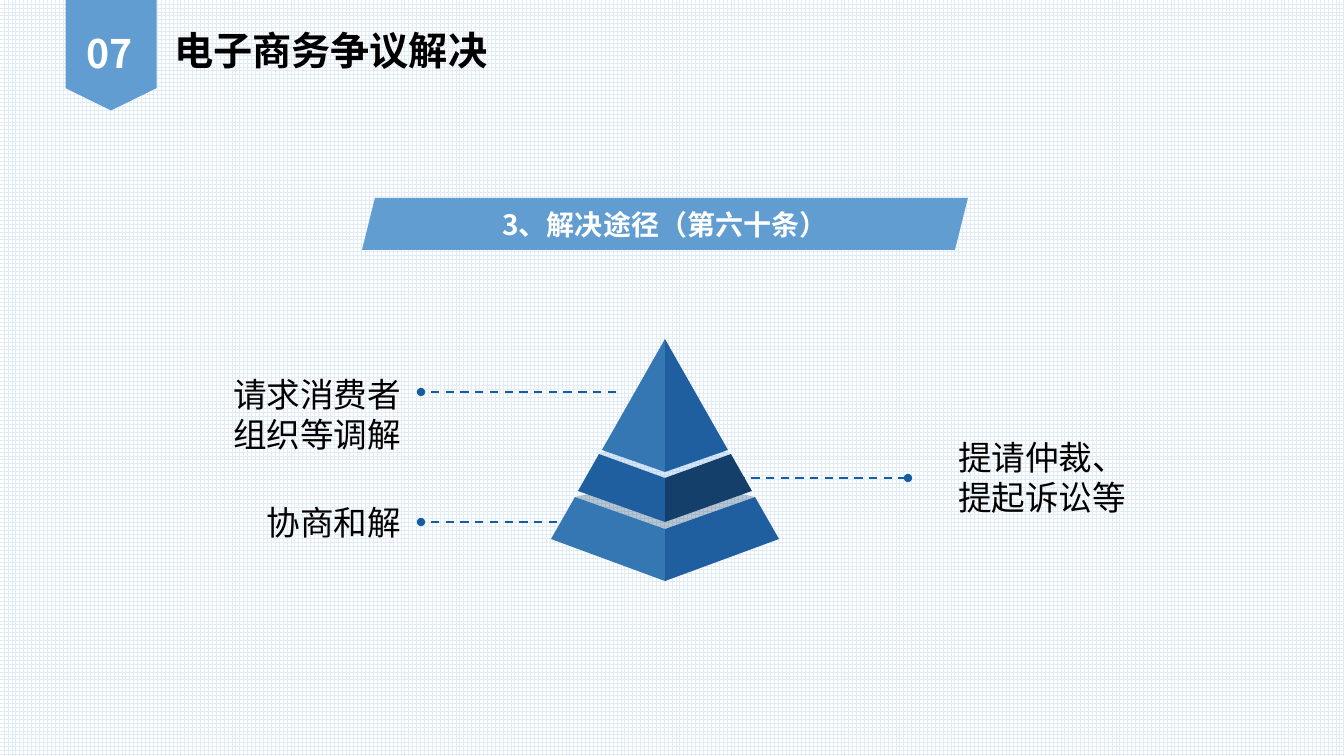
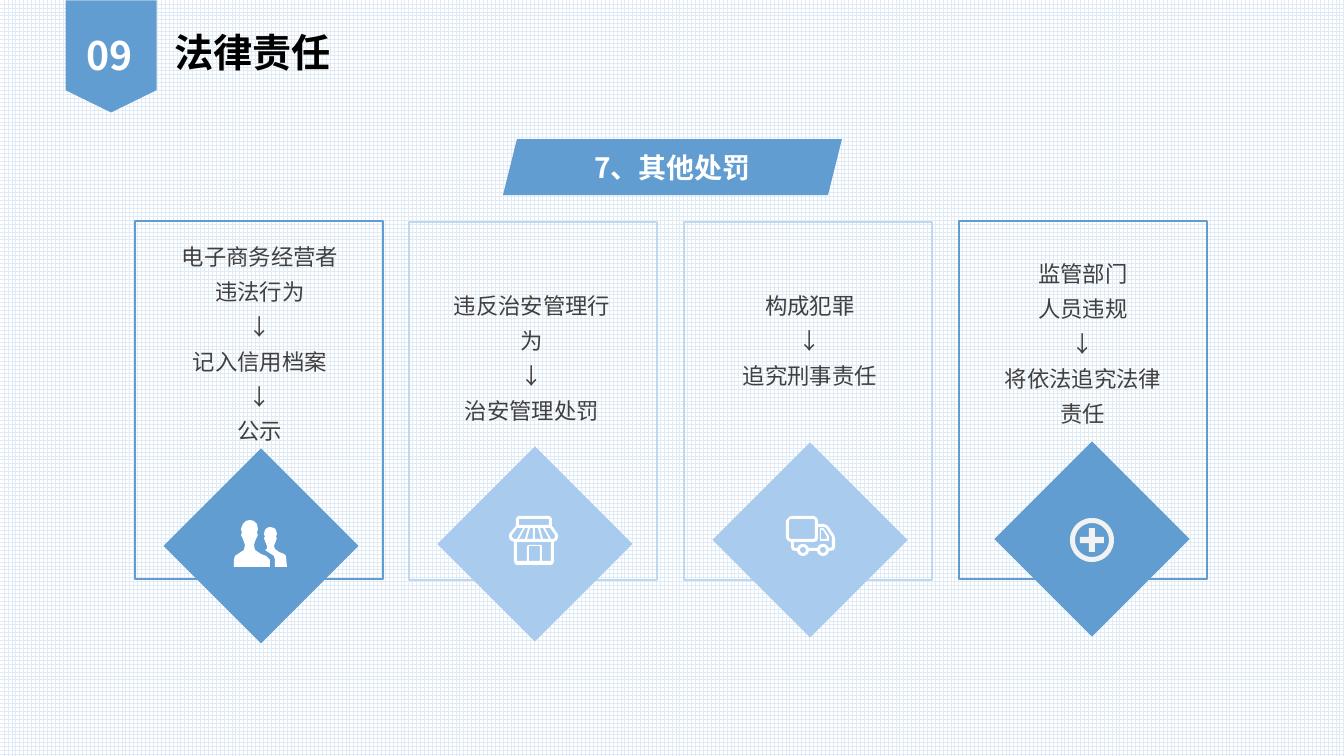
from math import cos, radians, sin
from typing import NamedTuple

from lxml.etree import SubElement
from pptx import Presentation
from pptx.dml.color import RGBColor
from pptx.enum.dml import MSO_LINE_DASH_STYLE as Dash, MSO_PATTERN_TYPE as Pattern
from pptx.enum.shapes import MSO_CONNECTOR_TYPE as Connector, MSO_SHAPE as Preset
from pptx.enum.text import MSO_ANCHOR as Anchor, MSO_AUTO_SIZE as AutoSize, PP_ALIGN as Align
from pptx.oxml.ns import qn
from pptx.util import Emu, Pt

EMU_PER_PX = 12192000 / 1344
FONT = "Noto Sans CJK SC"
BLUE, PALE_BLUE, PALE_LINE = "629DD1", "A9CCEE", "C0D8ED"
LIGHT_FACE, MID_FACE, DARK_FACE, LID = "3477B2", "1F5FA0", "143F6A", "7EB2E6"
LINK, WHITE, BLACK, GREY = "135DA0", "FFFFFF", "000000", "404040"
HEADING = {"size": Pt(28), "bold": True}
BANNER = {"size": Pt(20), "bold": True}
CALLOUT = {"size": Pt(24), "bold": False}
CARD_TEXT = {"size": Pt(16), "bold": False}


class Tier(NamedTuple):
    half_top: int
    shoulder: int
    ridge: int
    half_bottom: int
    corner: int
    front: int
    left_face: str
    right_face: str
    back: int = 0
    lid: str = ""


class Card(NamedTuple):
    top: int
    border: str
    fill: str
    diamond: tuple
    text_box: tuple
    lines: list
    icon: list
    icon_at: tuple
    icon_colour: str = WHITE


def px(length):
    return Emu(round(length * EMU_PER_PX))


def colour(value):
    return RGBColor.from_string(value)


def assign(target, values):
    for name, value in values.items():
        setattr(target, name, value)


def write(frame, lines, font, ink, align=Align.LEFT, spacing=1.0, anchor=Anchor.TOP):
    assign(frame, {"word_wrap": True, "auto_size": AutoSize.NONE, "vertical_anchor": anchor})
    for number, line in enumerate(lines):
        para = frame.add_paragraph() if number else frame.paragraphs[0]
        assign(para, {"alignment": align, "line_spacing": spacing})
        span = para.add_run()
        span.text = line
        assign(span.font, {"name": FONT, **font})
        span.font.color.rgb = colour(ink)
        SubElement(span.font._element, qn("a:ea"), typeface=FONT)


def add_text(page, box, lines, font, ink, **layout):
    label = page.shapes.add_textbox(*map(px, box))
    write(label.text_frame, lines, font, ink, **layout)


def paint(shape, fill=None, border=None, opacity=100):
    shape.shadow.inherit = False
    if fill:
        shape.fill.solid()
        shape.fill.fore_color.rgb = colour(fill)
    else:
        shape.fill.background()
    if border:
        shape.line.color.rgb = colour(border)
        shape.line.width = Pt(2)
    else:
        shape.line.fill.background()
    if opacity < 100:
        tint = shape.element.spPr.find(f"{qn('a:solidFill')}/{qn('a:srgbClr')}")
        SubElement(tint, qn("a:alpha"), val=str(opacity * 1000))


def add_preset(page, preset, box, rotation=0, **look):
    shape = page.shapes.add_shape(preset, *map(px, box))
    shape.rotation = rotation
    paint(shape, **look)
    return shape


def add_outline(page, contours, at=(0, 0), **look):
    builder = None
    for contour in contours:
        points = [(px(at[0] + x), px(at[1] + y)) for x, y in contour]
        if builder is None:
            builder = page.shapes.build_freeform(*points[0], scale=1.0)
        else:
            builder.move_to(*points[0])
        builder.add_line_segments(points[1:], close=True)
    paint(builder.convert_to_shape(), **look)


def add_link(page, begin_x, end_x, y):
    link = page.shapes.add_connector(Connector.STRAIGHT, px(begin_x), px(y), px(end_x), px(y))
    link.line.color.rgb = colour(LINK)
    assign(link.line, {"width": Pt(1.5), "dash_style": Dash.DASH})
    properties = link.element.spPr
    SubElement(properties.find(qn("a:ln")), qn("a:tailEnd"), type="oval")
    SubElement(properties, qn("a:effectLst"))


def arc(x, y, radius, start, end, steps=12):
    angles = [radians(start + (end - start) * step / steps) for step in range(steps + 1)]
    return [(x + radius * cos(angle), y + radius * sin(angle)) for angle in angles]


def ring(x, y, radius):
    return arc(x, y, radius, 0, 360, 48)


def round_box(left, top, right, bottom, radius):
    return (
        arc(left + radius, top + radius, radius, 180, 270)
        + arc(right - radius, top + radius, radius, 270, 360)
        + arc(right - radius, bottom - radius, radius, 0, 90)
        + arc(left + radius, bottom - radius, radius, 90, 180)
    )


PEOPLE = [
    [(27, 34), (21, 30), (20, 25), (22, 19), (24, 15), (23, 13), (24, 9), (23, 4), (20, 1),
     (16, 0), (12, 1), (9, 4), (7, 9), (8, 13), (7, 15), (9, 19), (11, 25), (10, 30), (4, 34),
     (1, 36), (0, 40), (0, 47), (36, 47), (36, 40), (32, 36)],
    [(53, 47), (52, 36), (50, 34), (45, 32), (41, 29), (40, 26), (42, 21), (43, 18), (42, 17),
     (43, 14), (42, 10), (40, 8), (36, 7), (33, 8), (31, 10), (30, 14), (31, 17), (30, 18),
     (31, 21), (33, 26), (33, 29), (31, 30), (40, 36), (41, 40), (41, 47)],
]
SHOP = [
    [(48, 17), (44, 11), (43, 10), (43, 3), (42, 1), (40, 0), (10, 0), (8, 1), (7, 3), (7, 10),
     (6, 11), (1, 17), (0, 19), (0, 21), (1, 24), (5, 26), (5, 45), (6, 48), (8, 49), (42, 49),
     (44, 48), (45, 45), (45, 26), (48, 24), (49, 21), (49, 19)],
    [(10, 3), (40, 3), (40, 9), (10, 9)],
    [(46, 21), (45, 23), (42, 23), (36, 12), (41, 12), (46, 19)],
    [(31, 12), (34, 12), (40, 23), (34, 23)],
    [(26, 12), (29, 12), (32, 23), (26, 23)],
    [(21, 12), (24, 12), (24, 23), (18, 23)],
    [(16, 12), (19, 12), (16, 23), (10, 23)],
    [(3, 21), (3, 19), (8, 12), (14, 12), (8, 23), (5, 23)],
    [(42, 45), (33, 45), (33, 30), (32, 29), (20, 29), (18, 30), (18, 45), (8, 45), (8, 26),
     (42, 26)],
    [(20, 30), (31, 30), (31, 45), (20, 45)],
]
TRUCK = [
    [(48, 19), (42, 10), (38, 8), (32, 8), (32, 5), (31, 2), (28, 0), (5, 0), (2, 2), (0, 5),
     (0, 22), (2, 25), (5, 26), (5, 31), (6, 34), (9, 35), *arc(17, 34, 6, 170, 10),
     *arc(37, 34, 6, 170, 10), (44, 35), (48, 34), (49, 31), (49, 22)],
    round_box(3, 3, 29, 23, 2),
    [(46, 31), (44, 32), *arc(37, 34, 6, 340, 200), *arc(17, 34, 6, 340, 200), (9, 32),
     (8, 31), (8, 26), (28, 26), (31, 25), (32, 22), (32, 11), (38, 11), (40, 12), (46, 21)],
    ring(17, 34, 3),
    ring(37, 34, 3),
    [(38, 13), (43, 20), (43, 25), (34, 25), (34, 12), (37, 12)],
    [(37, 14), (41, 21), (41, 23), (35, 23), (35, 14)],
]
PLUS = [
    ring(22, 22, 22),
    ring(22, 22, 17),
    [(19, 10), (25, 10), (25, 19), (34, 19), (34, 25), (25, 25), (25, 34), (19, 34), (19, 25),
     (10, 25), (10, 19), (19, 19)],
]

TIERS = [
    Tier(90, 497, 529, 114, 539, 581, LIGHT_FACE, MID_FACE, 478, DARK_FACE),
    Tier(66, 454, 478, 87, 491, 522, MID_FACE, DARK_FACE, 427, LID),
    Tier(0, 339, 339, 63, 450, 472, LIGHT_FACE, MID_FACE),
]
CARDS = [
    Card(221, BLUE, BLUE, (57, 477), (26, 230, 222),
         ["电子商务经营者", "违法行为", "↓", "记入信用档案", "↓", "公示"], PEOPLE, (234, 520)),
    Card(222, PALE_LINE, PALE_BLUE, (57, 475), (24, 279, 151),
         ["违反治安管理行为", "↓", "治安管理处罚"], SHOP, (509, 516)),
    Card(222, PALE_LINE, PALE_BLUE, (57, 471), (27, 279, 116),
         ["构成犯罪", "↓", "追究刑事责任"], TRUCK, (786, 516)),
    Card(221, BLUE, BLUE, (64, 470), (25, 247, 186),
         ["监管部门", "人员违规", "↓", "将依法追究法律责任"], PLUS, (1070, 518), "F2F2F2"),
]


def start_deck():
    deck = Presentation()
    assign(deck, {"slide_width": px(1344), "slide_height": px(756)})
    grid = deck.slide_master.background.fill
    grid.patterned()
    grid.pattern = Pattern.LARGE_GRID
    grid.fore_color.rgb = colour("E0EBF6")
    grid.back_color.rgb = colour(WHITE)
    return deck


def add_page(deck, number, title, drop=0):
    page = deck.slides.add_slide(deck.slide_layouts[5])
    heading = page.shapes.title
    assign(heading, {"left": px(164), "top": px(21 + drop), "width": px(459), "height": px(57)})
    write(heading.text_frame, [title], HEADING, BLACK)
    tag = add_preset(page, Preset.PENTAGON, (55, 9 + drop, 112, 91), 90, fill=BLUE)
    tag.adjustments[0] = 0.245
    add_text(page, (77, 24 + drop, 91, 57), [number], HEADING, WHITE)
    return page


def add_banner(page, box, text):
    banner = add_preset(page, Preset.PARALLELOGRAM, box, fill=BLUE)
    assign(banner.text_frame, {"margin_left": 0, "margin_right": 0})
    write(banner.text_frame, [text], BANNER, WHITE, align=Align.CENTER, anchor=Anchor.MIDDLE)


def add_tier(page, tier, middle):
    if tier.lid:
        lid = [(middle, tier.back), (middle - tier.half_top, tier.shoulder),
               (middle, tier.ridge), (middle + tier.half_top, tier.shoulder)]
        add_outline(page, [lid], fill=tier.lid, opacity=30)
    for side, face in ((1, tier.right_face), (-1, tier.left_face)):
        half = [(middle, tier.ridge), (middle + side * tier.half_top, tier.shoulder),
                (middle + side * tier.half_bottom, tier.corner), (middle, tier.front)]
        add_outline(page, [half], fill=face)


def add_card(page, card, left):
    add_preset(page, Preset.RECTANGLE, (left, card.top, 248, 358), border=card.border)
    shift, top = card.diamond
    add_preset(page, Preset.RECTANGLE, (left + shift, top, 138, 138), 45, fill=card.fill)
    shift, top, height = card.text_box
    add_text(page, (left + shift, top, 198, height), card.lines, CARD_TEXT, GREY,
             align=Align.CENTER, spacing=1.3)
    add_outline(page, card.icon, card.icon_at, fill=card.icon_colour)


def build_routes(deck):
    page = add_page(deck, "07", "电子商务争议解决")
    for link in ((707, 908, 478), (616, 421, 522), (616, 421, 392)):
        add_link(page, *link)
    for tier in TIERS:
        add_tier(page, tier, 665)
    for left, top, height, text in (
        (208, 497, 50, "协商和解"),
        (208, 369, 92, "请求消费者组织等调解"),
        (933, 432, 92, "提请仲裁、提起诉讼等"),
    ):
        add_text(page, (left, top, 203, height), [text], CALLOUT, BLACK, align=Align.RIGHT)
    add_banner(page, (362, 198, 606, 52), "3、解决途径（第六十条）")


def build_penalties(deck):
    page = add_page(deck, "09", "法律责任", drop=2)
    for index, card in enumerate(CARDS):
        add_card(page, card, 135 + 824 * index // 3)
    add_banner(page, (503, 139, 339, 56), "7、其他处罚")


def main():
    deck = start_deck()
    build_routes(deck)
    build_penalties(deck)
    deck.save("out.pptx")


if __name__ == "__main__":
    main()
